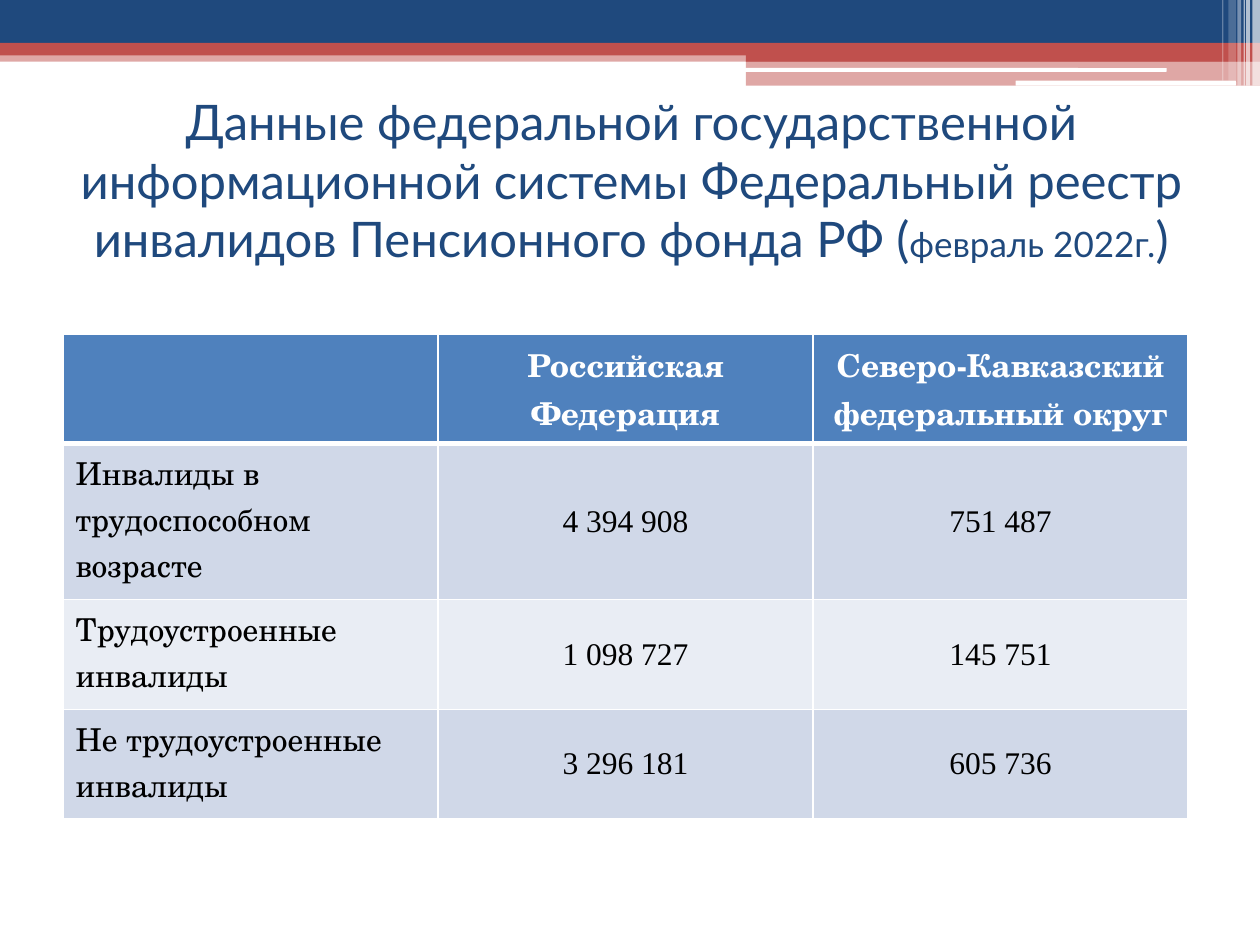
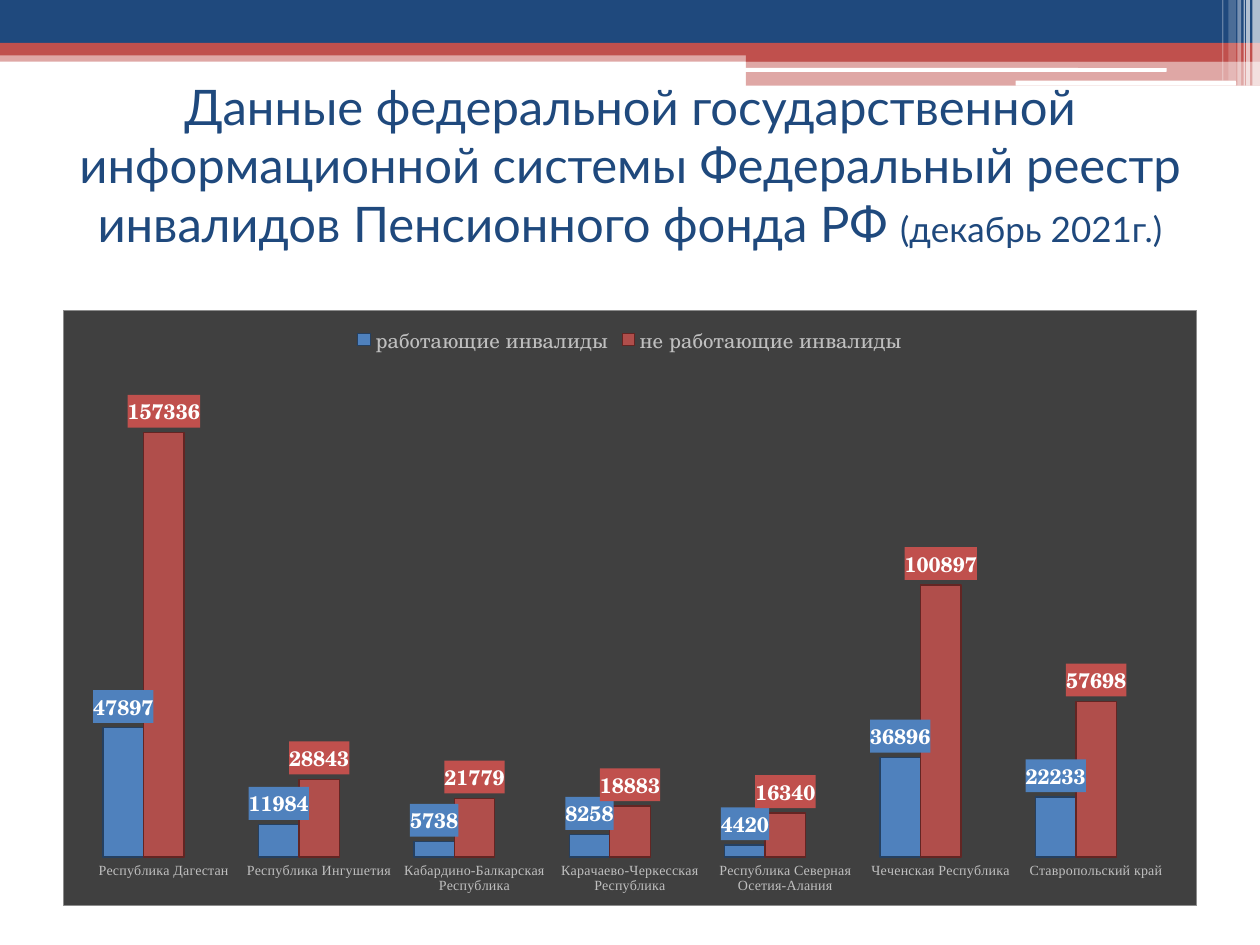
from pptx import Presentation
from pptx.chart.data import CategoryChartData
from pptx.dml.color import RGBColor
from pptx.enum.chart import XL_CHART_TYPE, XL_LABEL_POSITION, XL_LEGEND_POSITION, XL_TICK_MARK
from pptx.enum.shapes import MSO_SHAPE
from pptx.enum.text import MSO_ANCHOR, PP_ALIGN
from pptx.oxml import parse_xml
from pptx.oxml.ns import nsdecls, qn
from pptx.util import Inches, Pt

RECT, ROUNDED = MSO_SHAPE.RECTANGLE, MSO_SHAPE.ROUNDED_RECTANGLE
LEFT, CENTER = PP_ALIGN.LEFT, PP_ALIGN.CENTER
TOP, MIDDLE = MSO_ANCHOR.TOP, MSO_ANCHOR.MIDDLE
CLUSTERED = XL_CHART_TYPE.COLUMN_CLUSTERED
OUTSIDE_END = XL_LABEL_POSITION.OUTSIDE_END
LEGEND_TOP = XL_LEGEND_POSITION.TOP
NO_TICKS = XL_TICK_MARK.NONE

NAVY, RED, BLUE, WHITE, BLACK = "1F497D", "C0504D", "4F81BD", "FFFFFF", "000000"
ROW_FILLS = ("D0D8E8", "E9EDF4")
CHART_FILL, CHART_BORDER, CHART_TEXT = "404040", "8C8C8C", "BFBFBF"

SCHOLA, TIMES = "TeX Gyre Schola", "Times New Roman"
TITLE = dict(name="Lato", size=Pt(28))
TITLE_DATE = dict(name="Lato", size=Pt(20))
TABLE_HEAD = dict(name=SCHOLA, size=Pt(18), bold=True)
TABLE_LABEL = dict(name=SCHOLA, size=Pt(18), bold=False)
TABLE_VALUE = dict(name=TIMES, size=Pt(18), bold=False)
CHART_BASE = dict(name=SCHOLA, size=Pt(10))
CHART_LEGEND = dict(name=SCHOLA, size=Pt(12))
CHART_LABEL = dict(name=SCHOLA, size=Pt(12), bold=True)
CHART_CATEGORY = dict(name=TIMES, size=Pt(8))

# left, top, width, height, colour, opacity in percent
BANDS = [
    (0, 0.4, 10, 0.09, RED, 50),
    (0, 0, 10, 0.34, NAVY, 100),
    (0, 0.34, 10, 0.1, RED, 100),
    (5.92, 0.39, 4.08, 0.1, RED, 100),
    (5.92, 0.48, 4.08, 0.2, RED, 50),
]
WHITE_BARS = [(5.91, 0.54, 3.35, 0.03), (8.06, 0.64, 1.75, 0.04)]
# left, width, height, opacity in percent
CORNER_STRIPES = [
    (9.94, 0.06, 0.68, 65),
    (9.89, 0.03, 0.68, 65),
    (9.87, 0.01, 0.68, 60),
    (9.82, 0.03, 0.68, 40),
    (9.75, 0.06, 0.64, 20),
    (9.7, 0.01, 0.64, 30),
]

REGISTRY = ("Данные федеральной государственной информационной системы "
            "Федеральный реестр инвалидов Пенсионного фонда РФ ")
DISABLED_COUNTS = [
    ("", "Российская Федерация", "Северо-Кавказский федеральный округ"),
    ("Инвалиды в трудоспособном возрасте", "4 394 908", "751 487"),
    ("Трудоустроенные инвалиды", "1 098 727", "145 751"),
    ("Не трудоустроенные инвалиды", "3 296 181", "605 736"),
]
REGIONS = [
    "Республика Дагестан", "Республика Ингушетия", "Кабардино-Балкарская Республика",
    "Карачаево-Черкесская Республика", "Республика Северная Осетия-Алания",
    "Чеченская Республика", "Ставропольский край",
]
WORKING = [47897, 11984, 5738, 8258, 4420, 36896, 22233]
NOT_WORKING = [157336, 28843, 21779, 18883, 16340, 100897, 57698]


def rgb(color):
    return RGBColor.from_string(color)


def set_font(font, style, color):
    for attribute, value in style.items():
        setattr(font, attribute, value)
    font.color.rgb = rgb(color)


def set_opacity(element, percent):
    """Make the first solid fill inside the element partly transparent."""
    color = element.find(f".//{qn('a:solidFill')}/{qn('a:srgbClr')}")
    color.append(parse_xml(f'<a:alpha {nsdecls("a")} val="{percent * 1000}"/>'))


def fill_before_text(element, fill, border=None):
    """Give a chart part a background; its font must be set already."""
    line = (f'<a:ln w="{Pt(0.5)}"><a:solidFill><a:srgbClr val="{border}"/></a:solidFill></a:ln>'
            if border else "")
    element.find(qn("c:txPr")).addprevious(parse_xml(
        f'<c:spPr {nsdecls("c", "a")}><a:solidFill><a:srgbClr val="{fill}"/></a:solidFill>'
        f"{line}</c:spPr>"))


def set_borders(cell, widths):
    for side, width in widths.items():
        cell._tc.get_or_add_tcPr().append(parse_xml(
            f'<a:ln{side} {nsdecls("a")} w="{Pt(width)}"><a:solidFill>'
            f'<a:srgbClr val="{WHITE}"/></a:solidFill></a:ln{side}>'))


class Deck:
    """Holds the presentation style and the slide being built."""

    def __init__(self):
        self.presentation = Presentation()
        self.presentation.slide_width = Inches(10)
        self.presentation.slide_height = Inches(7.5)
        self.slide = None

    def new_slide(self):
        self.slide = self.presentation.slides.add_slide(self.presentation.slide_layouts[6])
        for left, top, width, height, color, opacity in BANDS:
            self.block(RECT, (left, top, width, height), color, opacity)
        for box in WHITE_BARS:
            self.block(ROUNDED, box, WHITE)
        for left, width, height, opacity in CORNER_STRIPES:
            self.block(RECT, (left, 0, width, height), WHITE, opacity)

    def block(self, preset, box, color, opacity=100):
        shape = self.slide.shapes.add_shape(preset, *map(Inches, box))
        shape.shadow.inherit = False
        shape.fill.solid()
        shape.fill.fore_color.rgb = rgb(color)
        shape.line.fill.background()
        if opacity < 100:
            set_opacity(shape._element, opacity)

    def title(self, box, parts):
        frame = self.slide.shapes.add_textbox(*map(Inches, box)).text_frame
        frame.word_wrap = True
        frame.vertical_anchor = MIDDLE
        paragraph = frame.paragraphs[0]
        paragraph.alignment = CENTER
        for text, style in parts:
            run = paragraph.add_run()
            run.text = text
            set_font(run.font, style, NAVY)

    def table(self, box, rows, row_heights):
        table = self.slide.shapes.add_table(
            len(rows), len(rows[0]), *map(Inches, box)).table
        for row, height in zip(table.rows, row_heights):
            row.height = Inches(height)
        for r, texts in enumerate(rows):
            for c, text in enumerate(texts):
                self.cell(table.cell(r, c), text, r, c)

    def cell(self, cell, text, row, column):
        if row == 0:
            style, color, fill = TABLE_HEAD, WHITE, BLUE
        else:
            style = TABLE_VALUE if column else TABLE_LABEL
            color, fill = BLACK, ROW_FILLS[(row - 1) % 2]
        set_borders(cell, dict(L=1, R=1, T=3 if row == 1 else 1, B=3 if row == 0 else 1))
        cell.fill.solid()
        cell.fill.fore_color.rgb = rgb(fill)
        cell.vertical_anchor = MIDDLE if row and column else TOP
        paragraph = cell.text_frame.paragraphs[0]
        paragraph.alignment = CENTER if row == 0 or column else LEFT
        set_font(paragraph.font, style, color)
        if text:
            run = paragraph.add_run()
            run.text = text
            set_font(run.font, style, color)

    def column_chart(self, box, categories, series_styles):
        """series_styles: name, values, fill, outline, opacity in percent.

        A last series without values keeps free space in each group.
        """
        data = CategoryChartData()
        data.categories = categories
        for name, values, *_ in series_styles:
            data.add_series(name, values)
        data.add_series("Series 3", [None] * len(categories))
        chart = self.slide.shapes.add_chart(CLUSTERED, *map(Inches, box), data).chart
        chart.has_title = False
        set_font(chart.font, CHART_BASE, BLACK)
        fill_before_text(chart._chartSpace, CHART_FILL, CHART_BORDER)

        plot = chart.plots[0]
        plot.gap_width, plot.overlap, plot.vary_by_categories = 84, 0, False
        for series, (_, _, fill, outline, opacity) in zip(plot.series, series_styles):
            self.series(series, fill, outline, opacity)
        self.axes(chart)
        self.legend(chart, hidden_entry=len(series_styles))

    def series(self, series, fill, outline, opacity):
        series.format.fill.solid()
        series.format.fill.fore_color.rgb = rgb(fill)
        series.format.line.color.rgb = rgb(outline)
        series.format.line.width = Pt(0.75)
        if opacity < 100:
            set_opacity(series._element, opacity)
        labels = series.data_labels
        labels.show_value = True
        labels.position = OUTSIDE_END
        set_font(labels.font, CHART_LABEL, WHITE)
        fill_before_text(labels._element, fill)

    def axes(self, chart):
        chart.value_axis.visible = False
        chart.value_axis.has_major_gridlines = False
        chart.value_axis.minimum_scale = 0
        chart.value_axis.maximum_scale = 180000
        regions = chart.category_axis
        regions.major_tick_mark = regions.minor_tick_mark = NO_TICKS
        regions.format.line.fill.background()
        set_font(regions.tick_labels.font, CHART_CATEGORY, CHART_TEXT)

    def legend(self, chart, hidden_entry):
        chart.has_legend = True
        legend = chart.legend
        legend.position = LEGEND_TOP
        legend.include_in_layout = False
        set_font(legend.font, CHART_LEGEND, CHART_TEXT)
        legend._element.find(qn("c:legendPos")).addnext(parse_xml(
            f'<c:legendEntry {nsdecls("c")}><c:idx val="{hidden_entry}"/>'
            '<c:delete val="1"/></c:legendEntry>'))


def main():
    deck = Deck()

    deck.new_slide()
    deck.title((0.51, 0.84, 9, 1.17),
               [(REGISTRY + "(", TITLE), ("февраль 2022г.", TITLE_DATE), (")", TITLE)])
    deck.table((0.5, 2.65, 8.93, 3.85), DISABLED_COUNTS, (0.87, 1.24, 0.87, 0.87))

    deck.new_slide()
    deck.title((0.5, 0.52, 9, 1.57),
               [(REGISTRY, TITLE), ("(декабрь 2021г.)", TITLE_DATE)])
    deck.column_chart((0.5, 2.46, 9, 4.73), REGIONS, [
        ("работающие инвалиды", WORKING, BLUE, "254061", 100),
        ("не работающие инвалиды", NOT_WORKING, RED, "632523", 88),
    ])

    deck.presentation.save("out.pptx")


if __name__ == "__main__":
    main()
